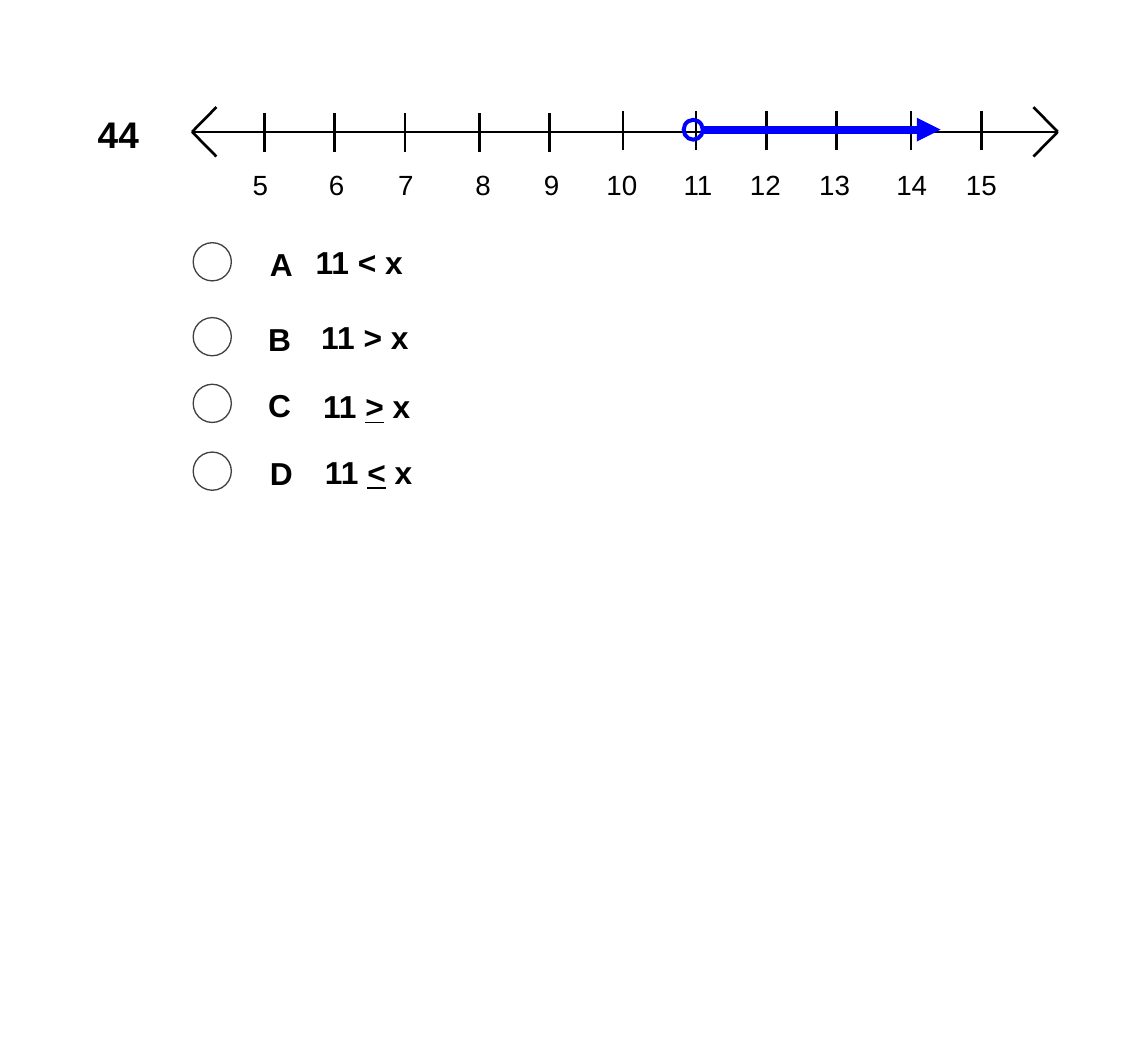
from dataclasses import dataclass

from lxml.etree import SubElement
from pptx import Presentation
from pptx.dml.color import RGBColor
from pptx.enum.shapes import MSO_CONNECTOR as Connector, MSO_SHAPE as Shape
from pptx.enum.text import MSO_ANCHOR as Anchor, MSO_AUTO_SIZE as AutoSize, PP_ALIGN as Align
from pptx.oxml.ns import qn
from pptx.util import Cm, Pt


@dataclass(frozen=True)
class Theme:
    """Colours, font and type sizes of the slide."""
    font: str = "Arial"
    ink: RGBColor = RGBColor(0, 0, 0)
    ray: RGBColor = RGBColor(0, 0, 255)
    paper: RGBColor = RGBColor(255, 255, 255)
    button: RGBColor = RGBColor(64, 64, 64)
    number_size: int = 28
    answer_size: int = 24
    label_size: int = 21


THEME = Theme()
TICKS = (1.93, 3.81, 5.69, 7.67, 9.55, 11.51, 13.46, 15.34, 17.22, 19.2, 21.08)
LABEL_TABS = (2.24, 4.09, 6.15, 7.98, 9.86, 11.89, 13.69, 15.54, 17.6, 19.46)
ANSWERS = (
    ("A", "<", False, 0, 1.75, 2.97, -0.16),
    ("B", ">", False, 2, 1.7, 3.12, -0.15),
    ("C", ">", True, 3.78, 1.7, 3.17, -0.07),
    ("D", "<", True, 5.59, 1.75, 3.22, -0.13),
)


def write(shape, *pieces, size, bold=False, underlined=None, inset=(0.3, 0.15)):
    """Write the pieces as runs of one paragraph, underlining the piece at one index."""
    frame = shape.text_frame
    frame.word_wrap = True
    frame.auto_size = AutoSize.NONE
    frame.vertical_anchor = Anchor.TOP
    frame.margin_left = frame.margin_right = Cm(inset[0])
    frame.margin_top = frame.margin_bottom = Cm(inset[1])
    paragraph = frame.paragraphs[0]
    paragraph.alignment = Align.LEFT
    for index, piece in enumerate(pieces):
        run = paragraph.add_run()
        run.text = piece
        run.font.name = THEME.font
        run.font.size = Pt(size)
        run.font.bold = bold
        run.font.underline = index == underlined
        run.font.color.rgb = THEME.ink
    return paragraph


def add_text(slide, left, top, width, height, *pieces, **style):
    """Add a text box and return its paragraph."""
    box = slide.shapes.add_textbox(Cm(left), Cm(top), Cm(width), Cm(height))
    return write(box, *pieces, **style)


def add_line(slide, start, end, color=THEME.ink, width=2, arrow=False):
    """Draw a straight line, with an arrowhead at its end if asked."""
    line = slide.shapes.add_connector(Connector.STRAIGHT, *map(Cm, start + end))
    line.line.color.rgb = color
    line.line.width = Pt(width)
    if arrow:
        SubElement(line.line._get_or_add_ln(), qn("a:tailEnd"), type="triangle")
    SubElement(line._element.spPr, qn("a:effectLst"))


def add_circle(slide, left, top, width, height, color, weight, fill=None):
    """Draw a circle, left open when no fill is given."""
    circle = slide.shapes.add_shape(Shape.OVAL, Cm(left), Cm(top), Cm(width), Cm(height))
    circle.shadow.inherit = False
    circle.line.color.rgb = color
    circle.line.width = Pt(weight)
    if fill is None:
        circle.fill.background()
    else:
        circle.fill.solid()
        circle.fill.fore_color.rgb = fill


def add_question_number(slide, left, top, width, height):
    """Put the question number in the title placeholder."""
    title = slide.shapes.title
    title.left, title.top, title.width, title.height = map(Cm, (left, top, width, height))
    write(title, "44", size=THEME.number_size, bold=True)


def add_number_line(slide, left, top, width, height):
    """Draw the axis, its ticks and labels, and the ray that starts at 11."""
    middle = top + height / 2
    right = left + width
    add_line(slide, (left, middle), (right, middle))
    for tip, barb in ((left, left + 0.65), (right, right - 0.65)):
        for edge in (top, top + height):
            add_line(slide, (tip, middle), (barb, edge))
    for index, offset in enumerate(TICKS):
        upper = middle - (0.5 if index < 5 else 0.55)
        add_line(slide, (left + offset, upper), (left + offset, upper + 1.03))

    ray_y = middle - 0.06
    add_circle(slide, left + 13.13, ray_y - 0.26, 0.51, 0.53, THEME.ray, 3)
    add_line(slide, (left + 13.59, ray_y), (left + 19.99, ray_y), THEME.ray, 6, arrow=True)

    labels = add_text(slide, left + 1.37, top + 1.5, 21.16, 1.14,
                      "\t".join(map(str, range(5, 16))),
                      size=THEME.label_size, inset=(0.25, 0.13))
    tabs = SubElement(labels._p.get_or_add_pPr(), qn("a:tabLst"))
    for position in LABEL_TABS:
        SubElement(tabs, qn("a:tab"), pos=str(Cm(position)), algn="ctr")


def add_answers(slide, left, top, width, height):
    """Place a button, a letter and an inequality for each answer."""
    style = dict(size=THEME.answer_size, bold=True)
    for letter, sign, or_equal, row, letter_x, inequality_x, lift in ANSWERS:
        y = top + row
        add_circle(slide, left, y, 1.02, 1.02, THEME.button, 1, THEME.paper)
        add_text(slide, left + letter_x, y - 0.1, width, height, letter, **style)
        add_text(slide, left + inequality_x, y + lift, width, height, "11 ", sign, " x",
                 underlined=1 if or_equal else None, **style)


def main():
    """Build the question slide and save it."""
    presentation = Presentation()
    presentation.slide_width, presentation.slide_height = Cm(30.66), Cm(28.22)
    slide = presentation.slides.add_slide(presentation.slide_layouts[5])
    slide.background.fill.solid()
    slide.background.fill.fore_color.rgb = THEME.paper
    add_question_number(slide, 2.31, 2.82, 3.76, 1.5)
    add_number_line(slide, 5.13, 2.86, 23.12, 1.32)
    add_answers(slide, 5.16, 6.48, 6.55, 1.32)
    presentation.save("out.pptx")


if __name__ == "__main__":
    main()
